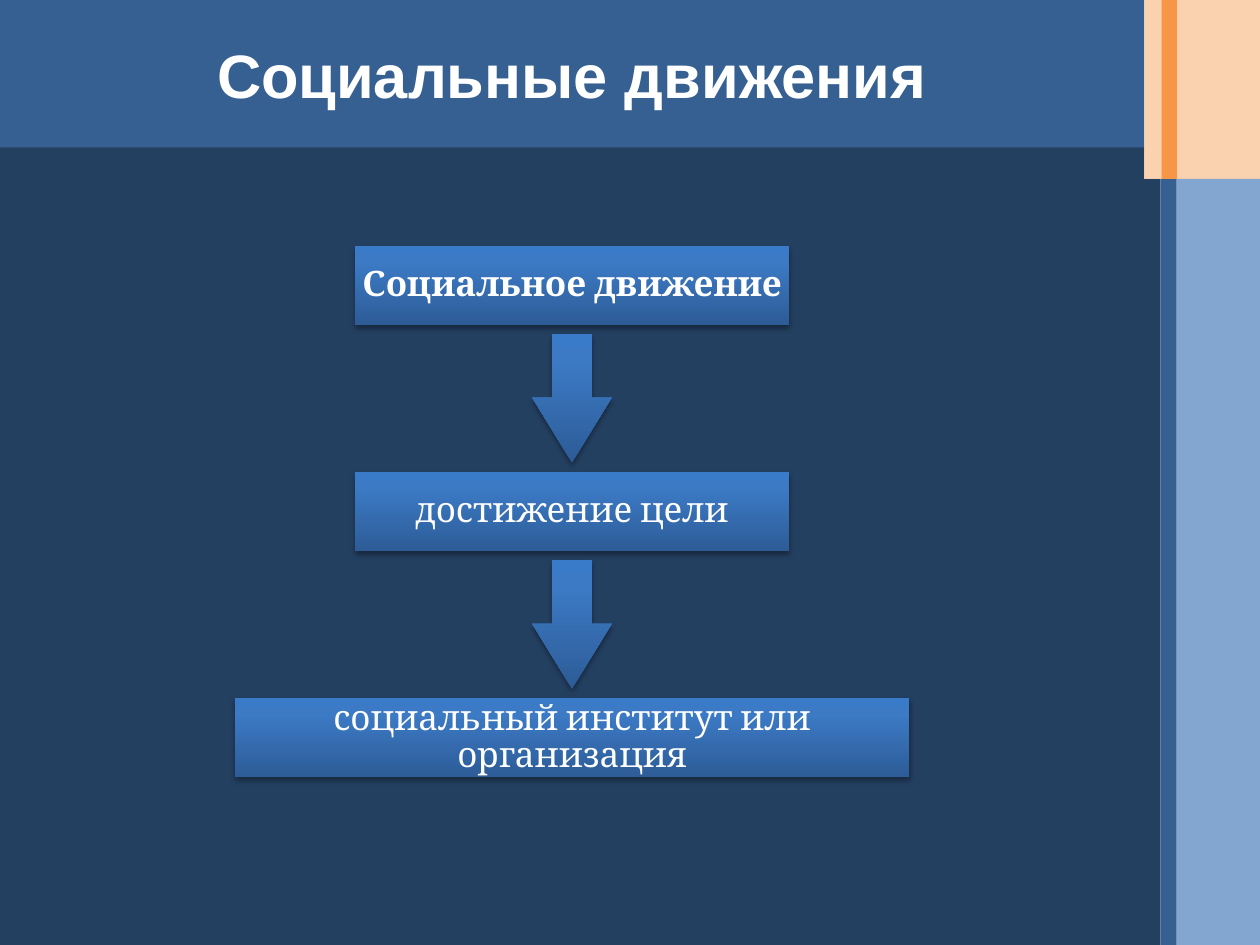
from lxml import etree
from pptx import Presentation
from pptx.dml.color import RGBColor
from pptx.enum.shapes import MSO_SHAPE
from pptx.enum.text import MSO_ANCHOR, PP_ALIGN
from pptx.oxml import parse_xml
from pptx.oxml.ns import nsdecls, qn
from pptx.util import Inches, Pt

COLORS = {
    "header": "366092", "body": "244061", "peach": "FABF8E", "side": "4F81BD",
    "orange": "F79646", "white": "FFFFFF", "shadow": "000000",
    "dark": "2D5C97", "middle": "3C7AC5", "light": "397BC9",
}
GRADIENT = [(0, "dark"), (80, "middle"), (100, "light")]
STEPS = [
    ("Социальное движение", 3.45, True),
    ("достижение цели", 3.45, False),
    ("социальный институт или организация", 5.35, False),
]


def rgb(name):
    return RGBColor.from_string(COLORS[name])


def add_block(slide, kind, left, top, width, height):
    shape = slide.shapes.add_shape(
        kind, Inches(left), Inches(top), Inches(width), Inches(height))
    shape.shadow.inherit = False
    shape.line.fill.background()
    return shape


def add_panel(slide, box, color, opacity=100):
    shape = add_block(slide, MSO_SHAPE.RECTANGLE, *box)
    shape.fill.solid()
    shape.fill.fore_color.rgb = rgb(color)
    if opacity < 100:
        color_element = shape.fill._xPr.find(qn("a:solidFill"))[0]
        etree.SubElement(color_element, qn("a:alpha"), val=str(opacity * 1000))


def shadow_effect(blur, distance, opacity):
    return parse_xml(
        f'<a:effectLst {nsdecls("a")}><a:outerShdw blurRad="{Pt(blur)}" '
        f'dist="{Pt(distance)}" dir="5400000" algn="ctr" rotWithShape="0">'
        f'<a:srgbClr val="{COLORS["shadow"]}"><a:alpha val="{opacity * 1000}"/>'
        '</a:srgbClr></a:outerShdw></a:effectLst>')


def style_gloss(shape):
    stops = "".join(
        f'<a:gs pos="{position * 1000}"><a:srgbClr val="{COLORS[name]}"/></a:gs>'
        for position, name in GRADIENT)
    gradient = parse_xml(
        f'<a:gradFill {nsdecls("a")} rotWithShape="1"><a:gsLst>{stops}</a:gsLst>'
        '<a:lin ang="16200000" scaled="0"/></a:gradFill>')
    properties = shape._element.spPr
    properties.find(qn("a:prstGeom")).addnext(gradient)
    properties.replace(properties.find(qn("a:effectLst")), shadow_effect(3.1, 1.8, 35))


def set_text(shape, text, font_name, size, bold):
    frame = shape.text_frame
    frame.text = text
    frame.word_wrap = True
    frame.vertical_anchor = MSO_ANCHOR.MIDDLE
    paragraph = frame.paragraphs[0]
    paragraph.alignment = PP_ALIGN.CENTER
    font = paragraph.runs[0].font
    font.size = Pt(size)
    font.bold = bold
    font.color.rgb = rgb("white")
    font._element.find(qn("a:solidFill")).addnext(shadow_effect(3, 3, 50))
    font.name = font_name
    return paragraph


def add_background(slide, width, height):
    split, band = 9.08, 1.42
    rail, edge = 9.21, 9.34
    add_panel(slide, (0, 0, split, 1.2), "header")
    add_panel(slide, (0, 1.17, split, height - 1.17), "body")
    add_panel(slide, (9.03, band, rail - 9.03, height - band), "body")
    add_panel(slide, (split, 0, width - split, band), "peach", 70)
    add_panel(slide, (edge, band, width - edge, height - band), "side", 70)
    add_panel(slide, (rail, band, edge - rail, height - band), "header")
    add_panel(slide, (9.22, 0, edge - 9.22, band), "orange")


def place_title(slide, left, top, width, height):
    title = slide.shapes.title
    title.left, title.top = Inches(left), Inches(top)
    title.width, title.height = Inches(width), Inches(height)
    set_text(title, "Социальные движения", "Arial", 35, True)
    slide.shapes._spTree.append(title._element)


def add_step(slide, center, top, width, height, text, bold):
    shape = add_block(slide, MSO_SHAPE.RECTANGLE, center - width / 2, top, width, height)
    style_gloss(shape)
    frame = shape.text_frame
    frame.margin_left = frame.margin_right = Inches(0.01)
    frame.margin_top = frame.margin_bottom = Inches(0.01)
    set_text(shape, text, "Cambria", 20, bold).line_spacing = 0.9


def add_arrow(slide, center, top, width, height):
    arrow = add_block(slide, MSO_SHAPE.DOWN_ARROW, center - width / 2, top, width, height)
    arrow.adjustments[0] = 0.5
    arrow.adjustments[1] = 0.82
    style_gloss(arrow)


def add_flow(slide, center, top):
    pitch, step_height, arrow_height = 1.795, 0.63, 1.02
    gap = (pitch - step_height - arrow_height) / 2
    for index, (text, width, bold) in enumerate(STEPS):
        step_top = top + index * pitch
        add_step(slide, center, step_top, width, step_height, text, bold)
        if index < len(STEPS) - 1:
            add_arrow(slide, center, step_top + step_height + gap, 0.63, arrow_height)


def main():
    presentation = Presentation()
    presentation.slide_width, presentation.slide_height = Inches(10), Inches(7.5)
    slide = presentation.slides.add_slide(presentation.slide_layouts[5])
    add_background(slide, 10, 7.5)
    place_title(slide, 0, 0, 9.08, 1.17)
    add_flow(slide, 4.54, 1.95)
    presentation.save("out.pptx")


if __name__ == "__main__":
    main()
